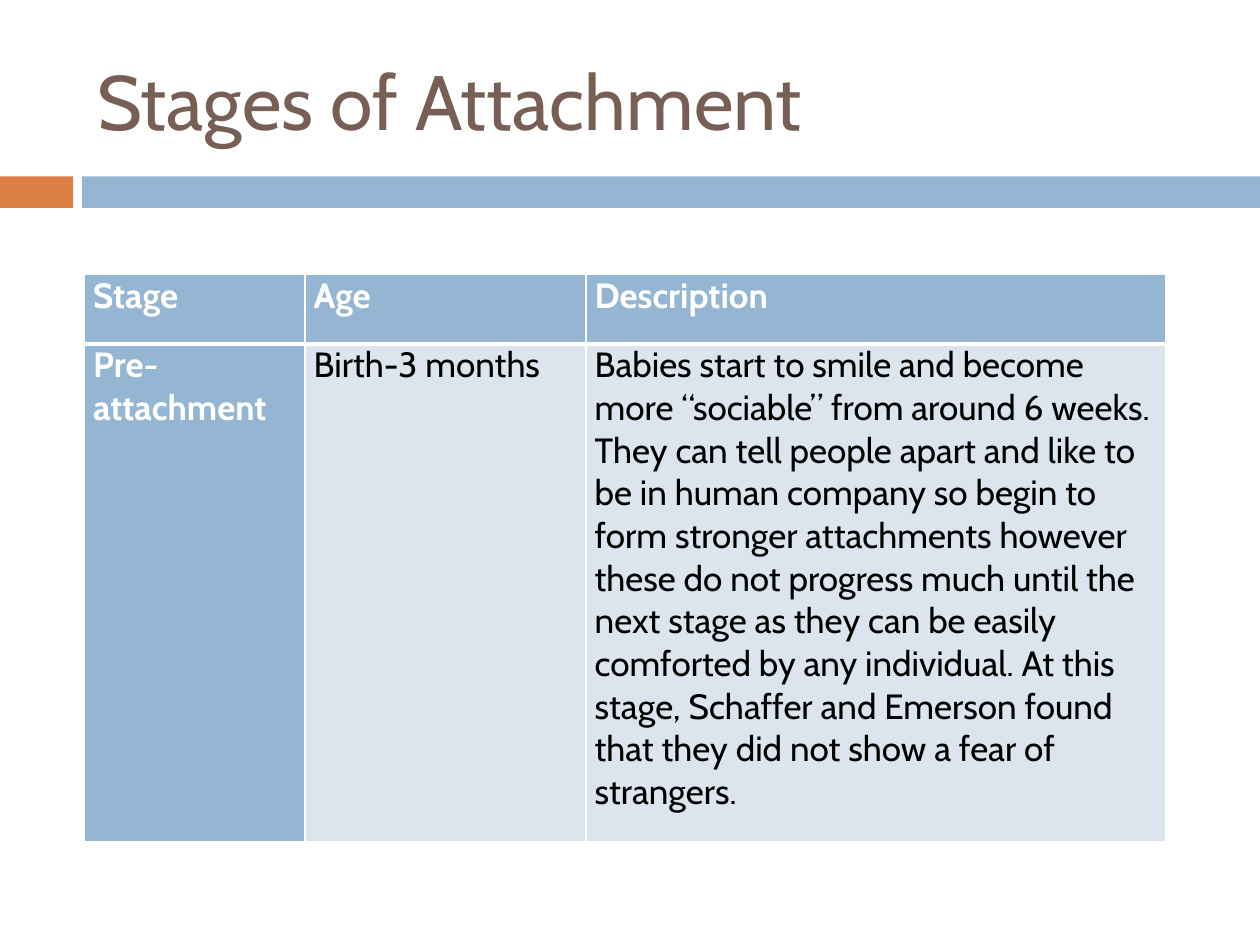
from typing import NamedTuple

from lxml import etree
from pptx import Presentation
from pptx.dml.color import RGBColor
from pptx.enum.shapes import MSO_SHAPE
from pptx.enum.text import MSO_ANCHOR, PP_ALIGN
from pptx.oxml.ns import qn
from pptx.util import Inches, Pt

RECT = MSO_SHAPE.RECTANGLE
MIDDLE, TOP = MSO_ANCHOR.MIDDLE, MSO_ANCHOR.TOP
LEFT = PP_ALIGN.LEFT
FONT = "Cabin"
TITLE_ONLY = 5
COLORS = {"orange": "DD8047", "blue": "94B6D2", "brown": "775F55",
          "pale": "DCE5EE", "white": "FFFFFF", "black": "000000"}


class Bar(NamedTuple):
    left: float
    width: float
    color: str


class CellText(NamedTuple):
    text: str
    heading: bool = True
    space_after: float = 1.5


BARS = [Bar(0, 0.58, "orange"), Bar(0.65, 9.35, "blue")]
COLUMNS = [1.75, 2.23, 4.6]
ROWS = [0.55, 3.95]
CELLS = [
    [CellText("Stage"), CellText("Age"), CellText("Description")],
    [CellText("Pre-attachment"),
     CellText("Birth-3 months", False),
     CellText("Babies start to smile and become more “sociable” from around 6 weeks. "
              "They can tell people apart and like to be in human company so begin to "
              "form stronger attachments however these do not progress much until the "
              "next stage as they can be easily comforted by any individual. At this "
              "stage, Schaffer and Emerson found that they did not show a fear of "
              "strangers.", False, 18)],
]


def rgb(name: str) -> RGBColor:
    return RGBColor.from_string(COLORS[name])


def set_attrs(target, values: dict) -> None:
    for name, value in values.items():
        setattr(target, name, value)


def write(tf, text: str, size: float, color: str, bold: bool = False,
          space_after: float = 0) -> None:
    p = tf.paragraphs[0]
    set_attrs(p, {"alignment": LEFT, "space_after": Pt(space_after)})
    r = p.add_run()
    r.text = text
    set_attrs(r.font, {"name": FONT, "size": Pt(size), "bold": bold})
    r.font.color.rgb = rgb(color)


def add_bar(s, bar: Bar) -> None:
    sp = s.shapes.add_shape(RECT, Inches(bar.left), Inches(1.4),
                            Inches(bar.width), Inches(0.25))
    sp.shadow.inherit = False
    sp.fill.solid()
    sp.fill.fore_color.rgb = rgb(bar.color)
    sp.line.fill.background()


def add_borders(cell, widths: dict[str, float]) -> None:
    props = cell._tc.get_or_add_tcPr()
    for index, (side, width) in enumerate(widths.items()):
        line = etree.Element(qn(f"a:ln{side}"), w=str(Pt(width)))
        fill = etree.SubElement(line, qn("a:solidFill"))
        etree.SubElement(fill, qn("a:srgbClr"), val=COLORS["white"])
        props.insert(index, line)


def fill_cell(cell, content: CellText, is_header: bool) -> None:
    set_attrs(cell, {"margin_left": Inches(0.07), "margin_right": Inches(0.07),
                     "margin_top": 0, "margin_bottom": 0, "vertical_anchor": TOP})
    cell.fill.solid()
    cell.fill.fore_color.rgb = rgb("blue" if content.heading else "pale")
    write(cell.text_frame, content.text, 20, "white" if content.heading else "black",
          content.heading, content.space_after)
    add_borders(cell, {"L": 1, "R": 1, "T": 1 if is_header else 3,
                       "B": 3 if is_header else 1})


def add_stage_table(s) -> None:
    table = s.shapes.add_table(len(ROWS), len(COLUMNS), Inches(0.67), Inches(2.18),
                               Inches(sum(COLUMNS)), Inches(sum(ROWS))).table
    set_attrs(table, {"horz_banding": False, "first_col": True})
    for column, width in zip(table.columns, COLUMNS):
        column.width = Inches(width)
    for index, (row, height) in enumerate(zip(table.rows, ROWS)):
        row.height = Inches(height)
        for cell, content in zip(row.cells, CELLS[index]):
            fill_cell(cell, content, index == 0)


def main() -> None:
    prs = Presentation()
    set_attrs(prs, {"slide_width": Inches(10), "slide_height": Inches(7.5)})
    s = prs.slides.add_slide(prs.slide_layouts[TITLE_ONLY])
    for bar in BARS:
        add_bar(s, bar)
    title = s.shapes.title
    set_attrs(title, {"left": Inches(0.67), "top": Inches(0.25),
                      "width": Inches(8.92), "height": Inches(1.08)})
    set_attrs(title.text_frame, {"vertical_anchor": MIDDLE, "word_wrap": True})
    write(title.text_frame, "Stages of Attachment", 44, "brown")
    add_stage_table(s)
    prs.save("out.pptx")


if __name__ == "__main__":
    main()
